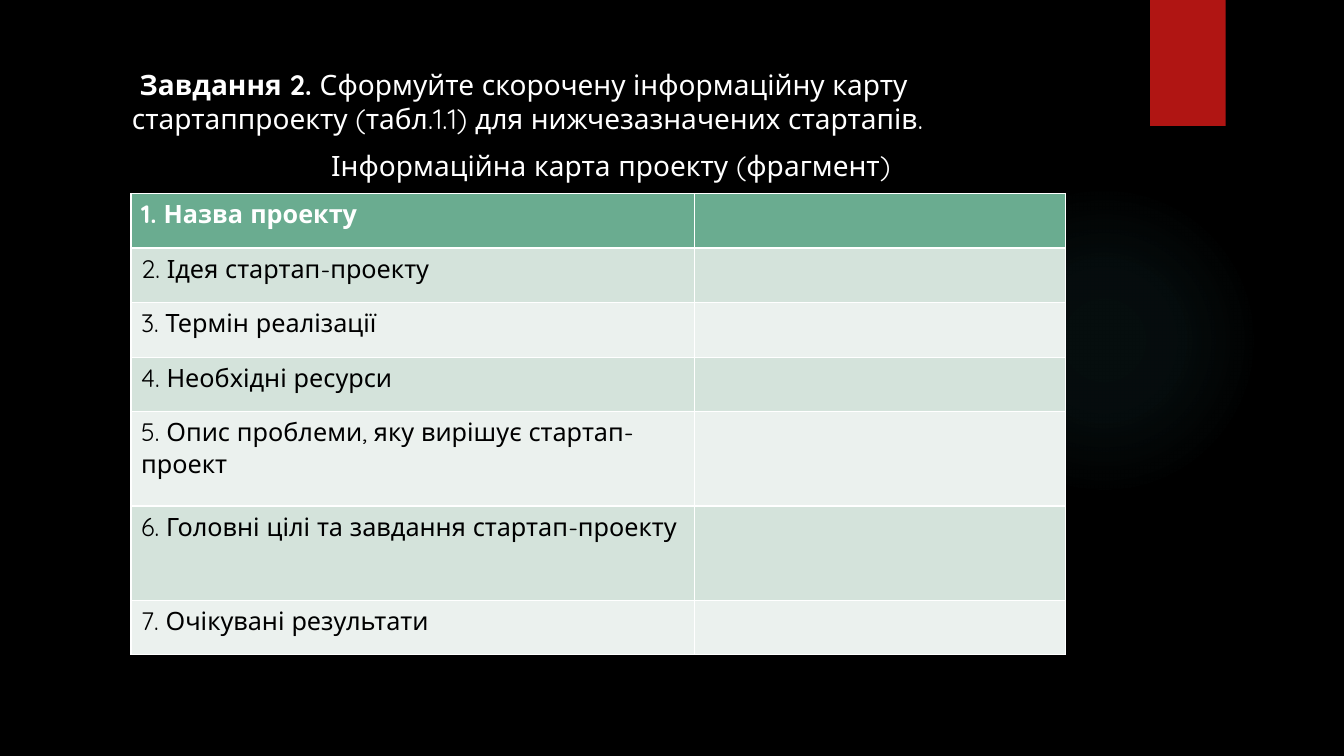
from pptx import Presentation
from pptx.dml.color import RGBColor
from pptx.enum.shapes import MSO_SHAPE as Shape
from pptx.enum.text import MSO_ANCHOR as Anchor, MSO_AUTO_SIZE as Auto, PP_ALIGN as Align
from pptx.oxml import parse_xml
from pptx.oxml.ns import nsdecls
from pptx.util import Pt

BLACK = RGBColor(0x00, 0x00, 0x00)
WHITE = RGBColor(0xFF, 0xFF, 0xFF)
RED = RGBColor(0xB0, 0x15, 0x13)
TEAL = RGBColor(0x50, 0xB9, 0xC1)
GREEN = RGBColor(0x6A, 0xAC, 0x90)
BANDS = RGBColor(0xEB, 0xF1, 0xEE), RGBColor(0xD4, 0xE3, 0xDB)

TASK = [
    (Align.LEFT, [
        (" Завдання 2. ", True),
        ("Сформуйте скорочену інформаційну карту стартаппроекту (табл.1.1) "
         "для нижчезазначених стартапів.", False),
    ]),
    (Align.CENTER, [("Інформаційна карта проекту (фрагмент) ", False)]),
]
LOW, TALL = 39, 67.3
ROWS = [
    ("1. Назва проекту", LOW),
    ("2. Ідея стартап-проекту", LOW),
    ("3. Термін реалізації", LOW),
    ("4. Необхідні ресурси", LOW),
    ("5. Опис проблеми, яку вирішує стартап-проект", TALL),
    ("6. Головні цілі та завдання стартап-проекту", TALL),
    ("7. Очікувані результати", LOW),
]
COLS = 402.5, 265


class Board:
    font = "Quicksand"

    def __init__(self, deck):
        self.slide = deck.slides.add_slide(deck.slide_layouts[5])
        back = self.slide.background.fill
        back.solid()
        back.fore_color.rgb = BLACK

    def run(self, para, text, size, color, bold=False):
        run = para.add_run()
        run.text = text
        font = run.font
        font.name, font.size, font.bold = self.font, Pt(size), bold
        font.color.rgb = color

    def title(self, x, y, w, h, paras):
        box = self.slide.shapes.title
        box.left, box.top, box.width, box.height = Pt(x), Pt(y), Pt(w), Pt(h)
        frame = box.text_frame
        frame.word_wrap = True
        frame.auto_size = Auto.NONE
        frame.vertical_anchor = Anchor.TOP
        for i, (align, runs) in enumerate(paras):
            para = frame.add_paragraph() if i else frame.paragraphs[0]
            para.alignment = align
            para.space_before = Pt(10 if i else 0)
            for text, bold in runs:
                self.run(para, text, 20, WHITE, bold)

    def shape(self, kind, x, y, w, h, color):
        item = self.slide.shapes.add_shape(kind, Pt(x), Pt(y), Pt(w), Pt(h))
        item.shadow.inherit = False
        item.fill.solid()
        item.fill.fore_color.rgb = color
        item.line.fill.background()
        return item

    def glow(self, x, y, size, color, stops):
        """Draw a disc that fades outward; stops are (place, opacity) in percent."""
        disc = self.shape(Shape.OVAL, x, y, size, size, color)
        marks = "".join(
            f'<a:gs pos="{place * 1000}"><a:srgbClr val="{color}">'
            f'<a:alpha val="{alpha * 1000}"/></a:srgbClr></a:gs>'
            for place, alpha in stops)
        grad = parse_xml(
            f'<a:gradFill {nsdecls("a")}><a:gsLst>{marks}</a:gsLst><a:path path="circle">'
            '<a:fillToRect l="50000" t="50000" r="50000" b="50000"/></a:path></a:gradFill>')
        props = disc.element.spPr
        props.replace(props.find(".//{*}solidFill"), grad)

    def table(self, x, y, cols, rows):
        high = sum(tall for _, tall in rows)
        grid = self.slide.shapes.add_table(
            len(rows), len(cols), Pt(x), Pt(y), Pt(sum(cols)), Pt(high)).table
        for col, wide in zip(grid.columns, cols):
            col.width = Pt(wide)
        for i, (text, tall) in enumerate(rows):
            row = grid.rows[i]
            row.height = Pt(tall)
            for cell in row.cells:
                cell.fill.solid()
                cell.fill.fore_color.rgb = BANDS[i % 2] if i else GREEN
            para = row.cells[0].text_frame.paragraphs[0]
            self.run(para, text, 18, BLACK if i else WHITE, i == 0)


def main():
    deck = Presentation()
    deck.slide_width, deck.slide_height = Pt(960), Pt(540)
    board = Board(deck)
    board.glow(677.5, 131.8, 222, TEAL, [(0, 7), (36, 6), (69, 0)])
    board.shape(Shape.RECTANGLE, 821.5, 0, 54, 90, RED)
    board.title(87, 44.6, 704, 437, TASK)
    board.table(93.6, 138.2, COLS, ROWS)
    deck.save("out.pptx")


if __name__ == "__main__":
    main()
